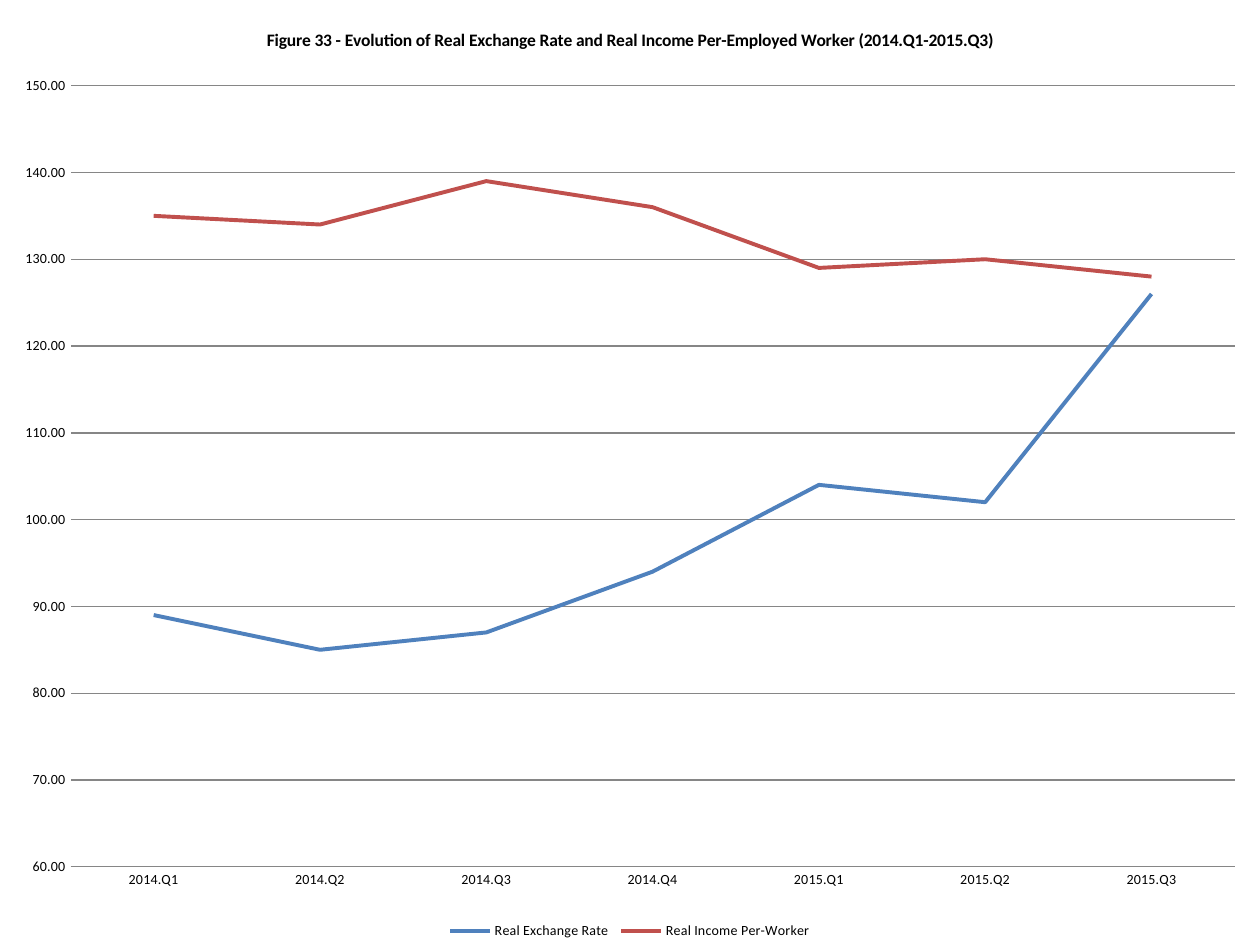
from lxml import etree
from pptx import Presentation
from pptx import util as u
from pptx.chart import data
from pptx.dml import color
from pptx.enum import chart as charts
from pptx.oxml import ns

TITLE = "Figure 33 - Evolution of Real Exchange Rate and Real Income Per-Employed Worker (2014.Q1-2015.Q3)"
QUARTERS = ["2014.Q1", "2014.Q2", "2014.Q3", "2014.Q4", "2015.Q1", "2015.Q2", "2015.Q3"]
SERIES = [
    ("Real Exchange Rate ", [89, 85, 87, 94, 104, 102, 126]),
    ("Real Income Per-Worker", [135, 134, 139, 136, 129, 130, 128]),
]
SLIDE_SIZE = (10, 7.5)
PLOT_BOX = {"x": 0.56, "y": 0.68, "w": 9.24, "h": 6.2}
THEME = {
    "font": "Calibri",
    "text": "000000",
    "rule": "868686",
    "lines": ["4F81BD", "C0504D"],
    "title_size": 10,
    "label_size": 8,
    "line_width": 2.25,
    "rule_width": 0.75,
}
VALUE_SCALE = {
    "minimum_scale": 60,
    "maximum_scale": 150,
    "major_unit": 10,
    "has_major_gridlines": True,
}


def set_attributes(target, values):
    for name, value in values.items():
        setattr(target, name, value)


def style_font(font, size, bold=False):
    set_attributes(font, {"name": THEME["font"], "size": u.Pt(size), "bold": bold})
    font.color.rgb = color.RGBColor.from_string(THEME["text"])


def style_line(line, rgb, width):
    line.color.rgb = color.RGBColor.from_string(rgb)
    line.width = u.Pt(width)


def place_plot(chart):
    plot_area = chart.element.find(".//" + ns.qn("c:plotArea"))
    layout = plot_area.find(ns.qn("c:layout"))
    if layout is None:
        layout = etree.Element(ns.qn("c:layout"))
        plot_area.insert(0, layout)
    manual = etree.SubElement(layout, ns.qn("c:manualLayout"))
    settings = {"layoutTarget": "inner", "xMode": "edge", "yMode": "edge"}
    for name, length in PLOT_BOX.items():
        extent = SLIDE_SIZE[0] if name in "xw" else SLIDE_SIZE[1]
        settings[name] = f"{length / extent:.4f}"
    for name, value in settings.items():
        etree.SubElement(manual, ns.qn("c:" + name)).set("val", value)


def style_axes(chart):
    for axis in (chart.category_axis, chart.value_axis):
        set_attributes(axis, {
            "major_tick_mark": charts.XL_TICK_MARK.NONE,
            "minor_tick_mark": charts.XL_TICK_MARK.NONE,
        })
        style_font(axis.tick_labels.font, THEME["label_size"])
    set_attributes(chart.value_axis, VALUE_SCALE)
    set_attributes(chart.value_axis.tick_labels, {
        "number_format": "0.00", "number_format_is_linked": False,
    })
    chart.value_axis.format.line.fill.background()
    for part in (chart.category_axis, chart.value_axis.major_gridlines):
        style_line(part.format.line, THEME["rule"], THEME["rule_width"])


def add_rate_chart(slide):
    chart_data = data.CategoryChartData(number_format="0.00")
    chart_data.categories = QUARTERS
    for name, values in SERIES:
        chart_data.add_series(name, values)
    width, height = map(u.Inches, SLIDE_SIZE)
    chart = slide.shapes.add_chart(
        charts.XL_CHART_TYPE.LINE, 0, 0, width, height, chart_data
    ).chart
    style_font(chart.font, THEME["title_size"])
    chart.has_title = True
    paragraph = chart.chart_title.text_frame.paragraphs[0]
    run = paragraph.add_run()
    run.text = TITLE
    style_font(run.font, THEME["title_size"], bold=True)
    chart.has_legend = True
    set_attributes(chart.legend, {
        "position": charts.XL_LEGEND_POSITION.BOTTOM, "include_in_layout": False,
    })
    style_font(chart.legend.font, THEME["label_size"])
    chart.plots[0].vary_by_categories = False
    for series, rgb in zip(chart.plots[0].series, THEME["lines"]):
        series.smooth = False
        series.marker.style = charts.XL_MARKER_STYLE.NONE
        style_line(series.format.line, rgb, THEME["line_width"])
    style_axes(chart)
    place_plot(chart)


def main():
    presentation = Presentation()
    width, height = map(u.Inches, SLIDE_SIZE)
    set_attributes(presentation, {"slide_width": width, "slide_height": height})
    slide = presentation.slides.add_slide(presentation.slide_layouts[6])
    add_rate_chart(slide)
    presentation.save("out.pptx")


if __name__ == "__main__":
    main()
